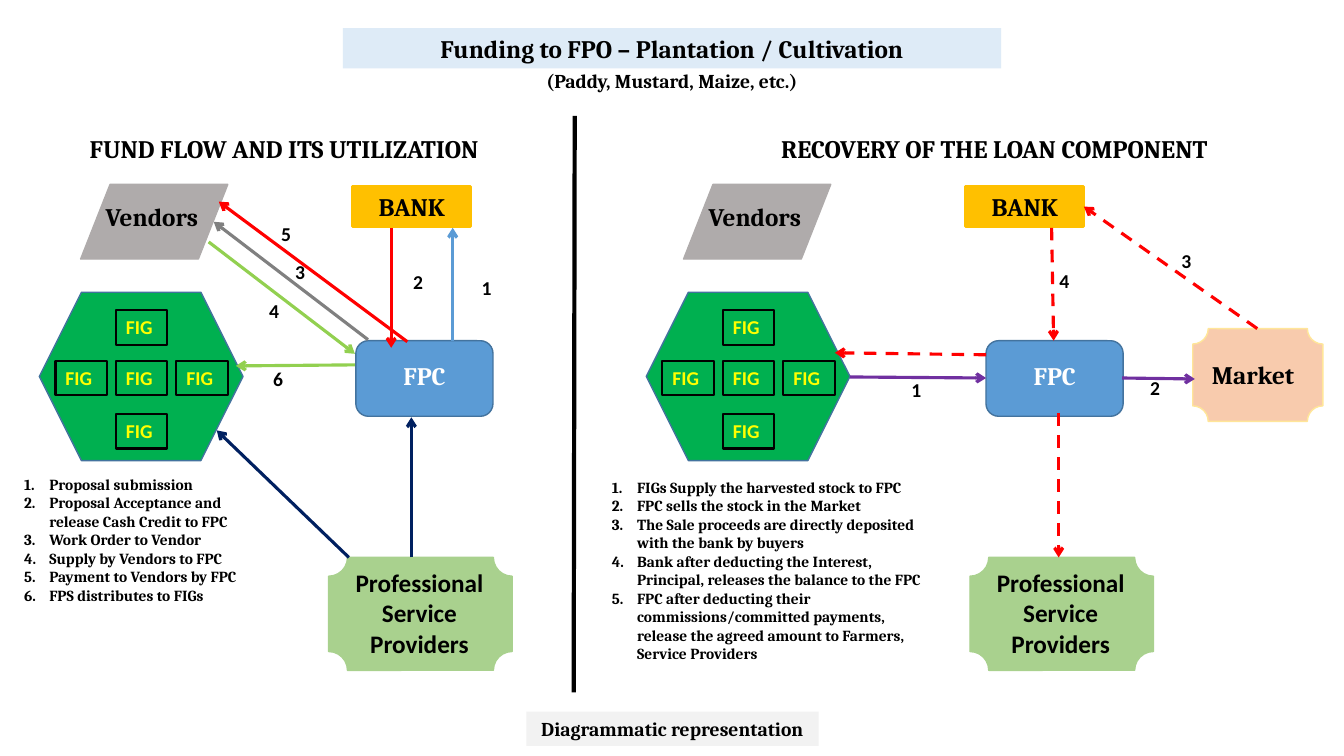
import pptx
import pptx.util
import pptx.dml.color
import pptx.enum.dml
import pptx.enum.shapes
import pptx.enum.text
import pptx.oxml.ns
import lxml.etree

Inches = pptx.util.Inches
Pt = pptx.util.Pt
RGBColor = pptx.dml.color.RGBColor
PRESET = pptx.enum.shapes.MSO_SHAPE
qn = pptx.oxml.ns.qn

BLACK = RGBColor(0x00, 0x00, 0x00)
WHITE = RGBColor(0xFF, 0xFF, 0xFF)
YELLOW = RGBColor(0xFF, 0xFF, 0x00)
GOLD = RGBColor(0xFF, 0xC0, 0x00)
BLUE = RGBColor(0x5B, 0x9B, 0xD5)
BLUE_EDGE = RGBColor(0x43, 0x73, 0x9E)
SILVER = RGBColor(0xAF, 0xAB, 0xAB)
GRAY = RGBColor(0x80, 0x80, 0x80)
GREEN = RGBColor(0x00, 0xB0, 0x50)
LIME = RGBColor(0x92, 0xD0, 0x50)
SAGE = RGBColor(0xA9, 0xD1, 0x8E)
RED = RGBColor(0xFF, 0x00, 0x00)
NAVY = RGBColor(0x00, 0x20, 0x60)
PURPLE = RGBColor(0x70, 0x30, 0xA0)
PEACH = RGBColor(0xF8, 0xCB, 0xAD)
CREAM = RGBColor(0xFF, 0xE6, 0x99)
PALE_BLUE = RGBColor(0xDE, 0xEB, 0xF7)
PALE_GRAY = RGBColor(0xF2, 0xF2, 0xF2)

prs = pptx.Presentation()
prs.slide_width, prs.slide_height = Inches(13.33), Inches(7.5)
slide = prs.slides.add_slide(prs.slide_layouts[6])


def put(text, left, top, width, height, *, preset=None, fill=None, line=None, weight=1,
        size=18, font="Cambria", color=BLACK, centered=False, numbered=False):
    """Place a text box, or a preset shape, holding bold text."""
    box = [Inches(v) for v in (left, top, width, height)]
    if preset is None:
        part = slide.shapes.add_textbox(*box)
    else:
        part = slide.shapes.add_shape(preset, *box)
        part.shadow.inherit = False
        for paint, shade in ((part.fill, fill), (part.line.fill, line)):
            if shade is None:
                paint.background()
            else:
                paint.solid()
                paint.fore_color.rgb = shade
        if line is not None:
            part.line.width = Pt(weight)
    if not text:
        return
    frame = part.text_frame
    frame.word_wrap = True
    frame.vertical_anchor = pptx.enum.text.MSO_ANCHOR.TOP
    frame.text = text
    for paragraph in frame.paragraphs:
        align = pptx.enum.text.PP_ALIGN
        paragraph.alignment = align.CENTER if centered else align.LEFT
        style = paragraph.runs[0].font
        style.name, style.size, style.bold = font, Pt(size), True
        style.color.rgb = color
        if numbered:
            props = paragraph._p.get_or_add_pPr()
            props.set("marL", str(Inches(0.25)))
            props.set("indent", str(-Inches(0.25)))
            bullet_font = lxml.etree.SubElement(props, qn("a:buFont"))
            bullet_font.set("typeface", "+mj-lt")
            lxml.etree.SubElement(props, qn("a:buAutoNum")).set("type", "arabicPeriod")


def connect(start, end, color, weight=2.25, dashed=False, arrow=True):
    """Draw a straight line, by default with an open arrowhead at its end."""
    link = slide.shapes.add_connector(
        pptx.enum.shapes.MSO_CONNECTOR.STRAIGHT, *[Inches(v) for v in (*start, *end)])
    link.line.color.rgb = color
    link.line.width = Pt(weight)
    if dashed:
        link.line.dash_style = pptx.enum.dml.MSO_LINE.DASH
    if arrow:
        lxml.etree.SubElement(link.line._ln, qn("a:tailEnd")).set("type", "arrow")
    lxml.etree.SubElement(link._element.spPr, qn("a:effectLst"))


# Title and footer
put("Funding to FPO – Plantation / Cultivation", 3.4, 0.28, 6.53, 0.4,
    preset=PRESET.RECTANGLE, fill=PALE_BLUE, centered=True)
put("(Paddy, Mustard, Maize, etc.)", 3.4, 0.63, 6.53, 0.34, size=14, centered=True)
put("Diagrammatic representation", 5.22, 7.06, 2.9, 0.34,
    preset=PRESET.RECTANGLE, fill=PALE_GRAY, size=14, centered=True)

# Headings and the divider between the two halves
put("FUND FLOW AND ITS UTILIZATION", 0.79, 1.27, 4.21, 0.4)
put("RECOVERY OF THE LOAN COMPONENT", 7.65, 1.27, 4.69, 0.4)
connect((5.7, 1.15), (5.69, 6.87), BLACK, weight=3, arrow=False)

# Parties shown in both halves, by their left edges
for vendors, farmers, bank, fpc, providers in (
        (0.8, 0.39, 3.5, 3.53, 3.26), (6.78, 6.41, 9.58, 9.78, 9.62)):
    put("BANK", bank, 1.85, 1.17, 0.4, preset=PRESET.RECTANGLE,
        fill=GOLD, line=GOLD, weight=2.25, centered=True)
    put("", fpc, 3.38, 1.36, 0.75, preset=PRESET.ROUNDED_RECTANGLE, fill=BLUE, line=BLUE_EDGE)
    put("FPC", fpc + 0.1, 3.53, 1.16, 0.4, color=WHITE, centered=True)
    put("", vendors, 1.83, 1.46, 0.74, preset=PRESET.FLOWCHART_DATA, fill=SILVER, line=SILVER)
    put("Vendors", vendors + 0.15, 1.95, 1.17, 0.4)
    put("", farmers, 2.9, 2.02, 1.67, preset=PRESET.HEXAGON, fill=GREEN, line=BLUE_EDGE)
    for column, top in ((0, 3.08), (-1, 3.58), (0, 3.58), (1, 3.58), (0, 4.11)):
        put("FIG", farmers + 0.76 + 0.6 * column, top, 0.51, 0.34, preset=PRESET.RECTANGLE,
            line=BLACK, weight=1.5, size=14, font="Calibri", color=YELLOW)
    put("", providers, 5.53, 1.82, 1.12, preset=PRESET.PLAQUE, fill=SAGE, line=SAGE)
    put("Professional Service Providers", providers + 0.09, 5.58, 1.62, 1.01,
        font="Calibri", centered=True)

# Market, only in the recovery half
put("", 11.83, 3.26, 1.29, 0.92, preset=PRESET.PLAQUE, fill=PEACH, line=CREAM)
put("Market", 11.92, 3.52, 1.12, 0.4)

# Flows: start, end, colour, dashed
for flow in (
        ((4.49, 3.38), (4.49, 2.26), BLUE, False),
        ((3.88, 2.26), (3.88, 3.45), RED, False),
        ((3.65, 3.37), (2.12, 2.2), GRAY, False),
        ((2.07, 2.4), (3.52, 3.51), LIME, False),
        ((3.52, 3.62), (2.34, 3.63), LIME, False),
        ((3.46, 5.53), (2.15, 4.27), NAVY, False),
        ((4.08, 5.53), (4.08, 4.14), NAVY, False),
        ((4.04, 3.39), (2.17, 2.0), RED, False),
        ((8.43, 3.74), (9.78, 3.75), PURPLE, False),
        ((11.13, 3.75), (11.85, 3.76), PURPLE, False),
        ((12.47, 3.26), (10.75, 2.05), RED, True),
        ((10.43, 2.26), (10.45, 3.38), RED, True),
        ((9.78, 3.52), (8.28, 3.5), RED, True),
        ((10.5, 4.1), (10.5, 5.53), RED, True)):
    start, end, color, dashed = flow
    connect(start, end, color, dashed=dashed)

# Step numbers beside the flows
for step, left, top in (
        ("1", 4.68, 2.69), ("2", 4.0, 2.63), ("3", 2.83, 2.53),
        ("4", 2.57, 2.92), ("5", 2.69, 2.15), ("6", 2.61, 3.59),
        ("1", 8.94, 3.7), ("2", 11.31, 3.68), ("3", 11.62, 2.42), ("4", 10.41, 2.62)):
    put(step, left, top, 0.53, 0.34, size=14, font="Calibri")

# Explanations of the steps
fund_steps = (
    "Proposal submission",
    "Proposal Acceptance and release Cash Credit to FPC",
    "Work Order to Vendor",
    "Supply by Vendors to FPC",
    "Payment to Vendors by FPC",
    "FPS distributes to FIGs")
recovery_steps = (
    "FIGs Supply the harvested stock to FPC",
    "FPC sells the stock in the Market",
    "The Sale proceeds are directly deposited with the bank by buyers",
    "Bank after deducting the Interest, Principal, releases the balance to the FPC",
    "FPC after deducting their commissions/committed payments, "
    "release the agreed amount to Farmers, Service Providers")
put("\n".join(fund_steps), 0.14, 4.66, 2.62, 1.58, size=11, numbered=True)
put("\n".join(recovery_steps), 5.97, 4.69, 3.33, 1.95, size=11, numbered=True)

prs.save("out.pptx")
